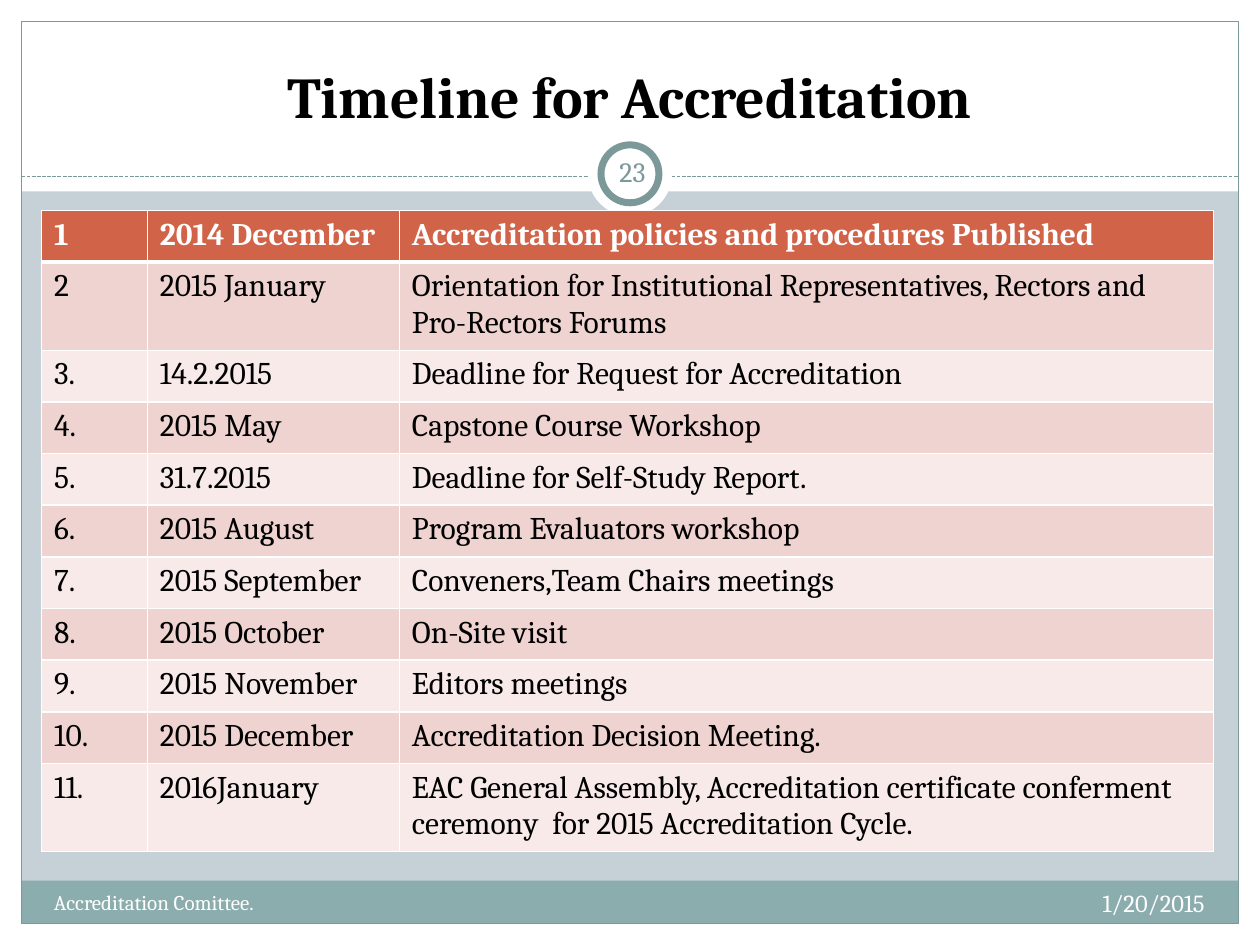
from lxml.etree import SubElement as Sub
from pptx import Presentation
from pptx.dml.color import RGBColor
from pptx.enum.dml import MSO_LINE_DASH_STYLE as Dash
from pptx.enum.shapes import MSO_CONNECTOR as Conn, MSO_SHAPE as Shape
from pptx.enum.text import MSO_ANCHOR as Anchor, PP_ALIGN as Align
from pptx.oxml.ns import qn
from pptx.util import Inches, Pt

WHITE = RGBColor(0xFF, 0xFF, 0xFF)
BLACK = RGBColor(0, 0, 0)
MIST = RGBColor(0xC5, 0xD1, 0xD7)
TEAL = RGBColor(0x8C, 0xAD, 0xAE)
SLATE = RGBColor(0x7C, 0x99, 0x9A)
RUST = RGBColor(0xD1, 0x63, 0x49)
ROSE = RGBColor(0xEE, 0xD3, 0xD0)
BLUSH = RGBColor(0xF7, 0xEA, 0xE9)

WIDE, HIGH, EDGE = 10, 7.5, 0.17
COLS = (0.84, 2, 6.46)
ROW = 0.41
STEPS = (
    ("1", "2014 December", "Accreditation policies and procedures Published"),
    ("2", "2015 January", "Orientation for Institutional Representatives, Rectors and Pro-Rectors Forums"),
    ("3.", "14.2.2015", "Deadline for Request for Accreditation"),
    ("4.", "2015 May", "Capstone Course Workshop"),
    ("5.", "31.7.2015", "Deadline for Self-Study Report."),
    ("6.", "2015 August", "Program Evaluators workshop"),
    ("7.", "2015 September", "Conveners,Team Chairs meetings"),
    ("8.", "2015 October", "On-Site visit"),
    ("9.", "2015 November", "Editors meetings"),
    ("10.", "2015 December", "Accreditation Decision Meeting."),
    ("11.", "2016January", "EAC General Assembly, Accreditation certificate conferment ceremony  for 2015 Accreditation Cycle."),
)


def apply(item, form):
    """Set every attribute named in a dict of format values."""
    for name, value in form.items():
        setattr(item, name, value)


def write(frame, words, size, color, bold=False, align=Align.LEFT):
    """Put one formatted paragraph in a text frame."""
    para = frame.paragraphs[0]
    para.alignment = align
    run = para.add_run()
    run.text = words
    apply(run.font, {"name": "Cambria", "size": Pt(size), "bold": bold})
    run.font.color.rgb = color


def label(slide, box, words, size, color, bold=False, align=Align.LEFT, **form):
    """Add a wrapped text box with the given frame format."""
    frame = slide.shapes.add_textbox(*map(Inches, box)).text_frame
    apply(frame, {"word_wrap": True, **form})
    write(frame, words, size, color, bold, align)


def block(slide, box, fill=None, line=None, width=0.75, kind=Shape.RECTANGLE):
    """Add a flat shape with an optional fill and outline."""
    shape = slide.shapes.add_shape(kind, *map(Inches, box))
    shape.shadow.inherit = False
    for part, color in ((shape.fill, fill), (shape.line.fill, line)):
        if color is None:
            part.background()
        else:
            part.solid()
            part.fore_color.rgb = color
    if line is not None:
        shape.line.width = Pt(width)


def border(slide, box):
    """Draw the white margins, footer band and outline of the page."""
    x, y, w, h = box
    block(slide, (x, y + h - EDGE, w, EDGE), WHITE)
    block(slide, (x, y, w, 1.52), WHITE)
    for left in (x, x + w - EDGE):
        block(slide, (left, y, EDGE, h), WHITE)
    block(slide, (x + EDGE, y + 6.99, w - 2 * EDGE, 0.34), TEAL)
    block(slide, (x + EDGE, y + EDGE, w - 2 * EDGE, h - 2 * EDGE), line=SLATE)


def header(slide, box):
    """Draw the title, dashed rule and page number badge."""
    x, y, w, h = box
    ends = (x + EDGE, y + 1.4, x + w - EDGE, y + 1.4)
    rule = slide.shapes.add_connector(Conn.STRAIGHT, *map(Inches, ends))
    rule.line.color.rgb = SLATE
    apply(rule.line, {"width": Pt(0.75), "dash_style": Dash.SQUARE_DOT})
    Sub(rule.line._get_or_add_ln().getparent(), qn("a:effectLst"))
    mid = x + w / 2
    for size, line in ((0.67, None), (0.46, SLATE)):
        ring = (mid - size / 2, y + 1.38 - size / 2, size, size)
        block(slide, ring, WHITE, line, 4, Shape.OVAL)
    label(slide, (x + 0.33, y + 0.25, w - 0.67, 0.83), "Timeline for Accreditation",
          33, BLACK, True, Align.CENTER, vertical_anchor=Anchor.BOTTOM)
    sides = ("left", "top", "right", "bottom")
    inset = {f"margin_{side}": Inches(0.05) for side in sides}
    label(slide, (mid - 0.23, y + 1.12, 0.5, 0.48), "23", 16, SLATE,
          align=Align.CENTER, vertical_anchor=Anchor.MIDDLE, **inset)


def footer(slide, box):
    """Write the committee name and the date."""
    x, y, w, h = box
    label(slide, (x + w - 3.33, y, 3.33, h), "1/20/2015", 14, WHITE, align=Align.RIGHT)
    label(slide, (x, y + 0.01, 3.92, h), "Accreditation Comittee.", 12, WHITE)


def edges(cell, row):
    """Give a cell white borders, heavy below the first row."""
    props = cell._tc.get_or_add_tcPr()
    for side in "LRTB":
        heavy = (row, side) in ((0, "B"), (1, "T"))
        line = Sub(props, qn(f"a:ln{side}"), w=str(Pt(3 if heavy else 1)))
        fill = Sub(line, qn("a:solidFill"))
        Sub(fill, qn("a:srgbClr"), val=str(WHITE))


def agenda(slide, box):
    """Build the table of dated steps."""
    grid = slide.shapes.add_table(len(STEPS), len(COLS), *map(Inches, box)).table
    for col, width in zip(grid.columns, COLS):
        col.width = Inches(width)
    for r, step in enumerate(STEPS):
        grid.rows[r].height = Inches(ROW)
        first = r == 0
        tint = RUST if first else (BLUSH, ROSE)[r % 2]
        for c, words in enumerate(step):
            cell = grid.cell(r, c)
            edges(cell, r)
            cell.fill.solid()
            cell.fill.fore_color.rgb = tint
            write(cell.text_frame, words, 18, WHITE if first else BLACK, first)


def main():
    """Build and save the slide."""
    deck = Presentation()
    apply(deck, {"slide_width": Inches(WIDE), "slide_height": Inches(HIGH)})
    slide = deck.slides.add_slide(deck.slide_layouts[6])
    back = slide.background.fill
    back.solid()
    back.fore_color.rgb = MIST
    border(slide, (0, 0, WIDE, HIGH))
    header(slide, (0, 0, WIDE, 1.72))
    footer(slide, (0.33, 7, 9.33, 0.4))
    agenda(slide, (0.33, 1.67, sum(COLS), ROW * len(STEPS)))
    deck.save("out.pptx")


if __name__ == "__main__":
    main()
